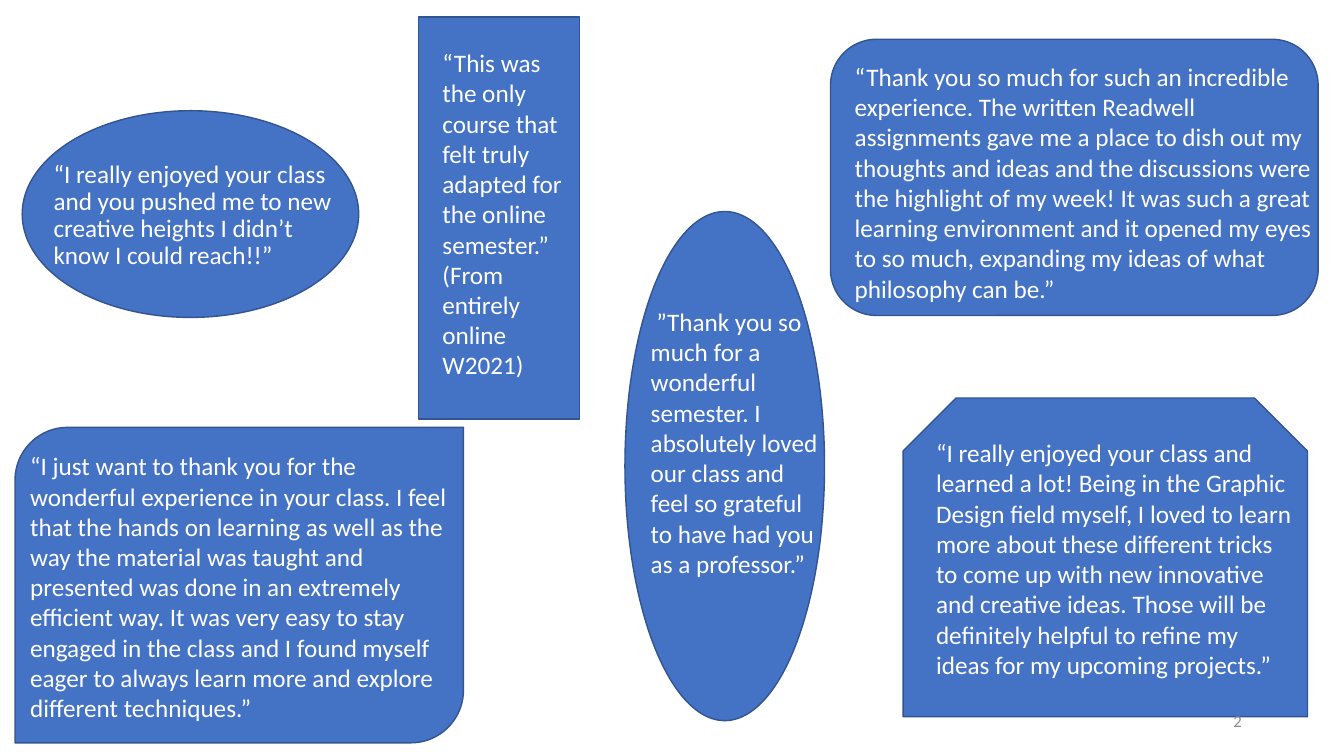
from pptx import Presentation
from pptx.dml.color import RGBColor
from pptx.enum.shapes import MSO_SHAPE as SHAPE
from pptx.enum.text import MSO_ANCHOR as ANCHOR, PP_ALIGN as ALIGN
from pptx.util import Cm, Pt

FONT = "Calibri"
BLUE, NAVY, WHITE, GREY = "4472C4", "325491", "FFFFFF", "8C8C8C"

QUOTES = [
    (SHAPE.RECTANGLE, (10.54, 0.43, 4.06, 10.13), (10.9, 1.07, 3.73, 9.5), {},
     "“This was the only course that felt truly adapted for the online semester.” "
     "(From entirely online W2021)"),
    (SHAPE.SNIP_2_SAME_RECTANGLE, (22.76, 10.03, 10.19, 8.03), (23.34, 10.9, 9.6, 7.19), {},
     "“I really enjoyed your class and learned a lot! Being in the Graphic Design field "
     "myself, I loved to learn more about these different tricks to come up with new "
     "innovative and creative ideas. Those will be definitely helpful to refine my ideas "
     "for my upcoming projects.”"),
    (SHAPE.ROUND_2_DIAG_RECTANGLE, (0.38, 10.77, 11.3, 7.95), (0.38, 11.23, 11.3, 7.19),
     {"inset": 0.38},
     "“I just want to thank you for the wonderful experience in your class. I feel that the "
     "hands on learning as well as the way the material was taught and presented was done in "
     "an extremely efficient way. It was very easy to stay engaged in the class and I found "
     "myself eager to always learn more and explore different techniques.”"),
    (SHAPE.ROUNDED_RECTANGLE, (20.93, 0.99, 12.29, 6.96), (21.29, 1.42, 12.09, 7.19), {},
     "“Thank you so much for such an incredible experience. The written Readwell assignments "
     "gave me a place to dish out my thoughts and ideas and the discussions were the highlight "
     "of my week! It was such a great learning environment and it opened my eyes to so much, "
     "expanding my ideas of what philosophy can be.”"),
    (SHAPE.OVAL, (0.56, 2.79, 8.48, 5.21), (0.97, 3.94, 8.05, 4.75),
     {"inset": 0.38, "spacing": 0.9},
     "“I really enjoyed your class and you pushed me to new creative heights I didn’t know "
     "I could reach!!”"),
    (SHAPE.OVAL, (15.75, 5.33, 5.03, 12.83), (16.15, 7.59, 4.72, 8.71), {},
     " ”Thank you so much for a wonderful semester. I absolutely loved our class and feel so "
     "grateful to have had you as a professor.”"),
]


def rgb(value):
    return RGBColor.from_string(value)


def box(lengths):
    return [Cm(length) for length in lengths]


def add_panel(s, kind, place):
    sp = s.shapes.add_shape(kind, *box(place))
    sp.shadow.inherit = False
    sp.fill.solid()
    sp.fill.fore_color.rgb = rgb(BLUE)
    sp.line.color.rgb = rgb(NAVY)
    sp.line.width = Pt(1)


def add_text(s, place, text, size=18, color=WHITE, align=ALIGN.LEFT,
             anchor=ANCHOR.TOP, inset=0.25, spacing=1.0):
    tf = s.shapes.add_textbox(*box(place)).text_frame
    tf.word_wrap = True
    tf.vertical_anchor = anchor
    tf.margin_left = Cm(inset)
    p = tf.paragraphs[0]
    p.alignment = align
    p.line_spacing = spacing
    r = p.add_run()
    r.text = text
    r.font.name = FONT
    r.font.size = Pt(size)
    r.font.color.rgb = rgb(color)


def main():
    prs = Presentation()
    prs.slide_width, prs.slide_height = Cm(33.87), Cm(19.05)
    s = prs.slides.add_slide(prs.slide_layouts[6])
    for kind, panel, place, style, quote in QUOTES:
        add_panel(s, kind, panel)
        add_text(s, place, quote, **style)
    add_text(s, (23.93, 17.65, 7.62, 1.02), "2", size=12, color=GREY,
             align=ALIGN.RIGHT, anchor=ANCHOR.MIDDLE)
    prs.save("out.pptx")


if __name__ == "__main__":
    main()
